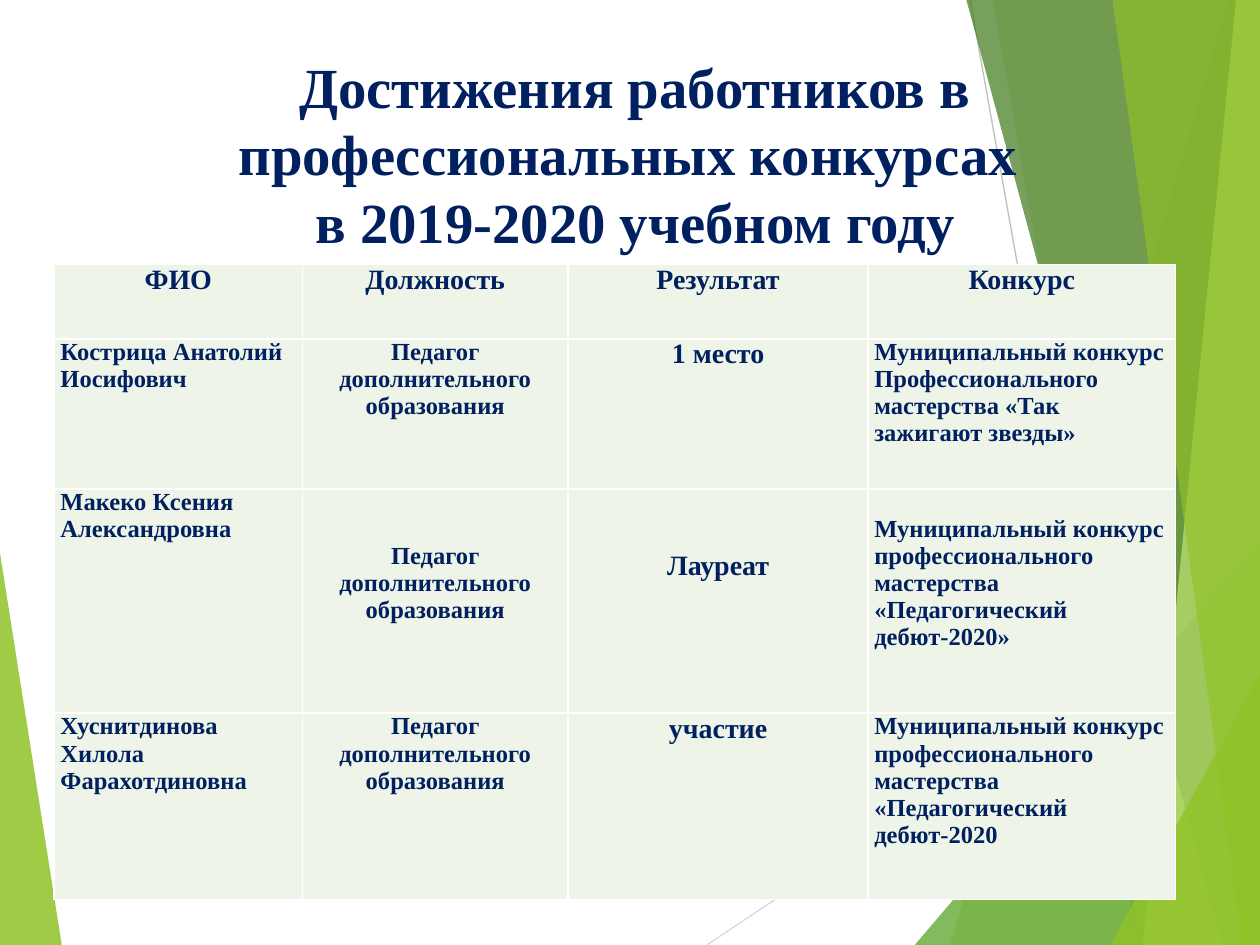
"""Build the slide on staff achievements in professional contests."""
from dataclasses import dataclass

from lxml import etree
from pptx import Presentation, util as u
from pptx.dml.color import RGBColor
from pptx.enum import shapes, text
from pptx.oxml import ns

Point = tuple[float, float]
FONT, NAVY, WHITE, CELL = "Times New Roman", "002060", "FFFFFF", "EEF4E8"
GREEN, MID_GREEN, DARK_GREEN, PALE_GREEN = "90C226", "54A021", "3F7819", "C0E474"
W, H = 10, 7.5


@dataclass
class Facet:
    """A translucent polygon of the background."""
    points: list[Point]
    color: str
    opacity: int


@dataclass
class Ray:
    """A thin background line."""
    start: Point
    end: Point
    color: str


@dataclass
class Entry:
    """A table cell: its paragraphs and the gap above them."""
    text: str
    top: float = 0


DECOR = [
    Facet([(0, 4.39), (0.49, H), (0, H)], GREEN, 85),
    Ray((5.61, H), (W, 4.57), "D9D9D9"),
    Ray((7.7, 0), (9.04, H), "BFBFBF"),
    Facet([(9.75, 0), (7.54, H), (W, H), (W, 0)], GREEN, 30),
    Facet([(7.88, 0), (9.19, H), (W, H), (W, 0)], GREEN, 20),
    Facet([(7.26, H), (W, 4.29), (W, H)], MID_GREEN, 72),
    Facet([(7.67, 0), (9.7, H), (W, H), (W, 0)], DARK_GREEN, 70),
    Facet([(9.81, 0), (9.07, H), (W, H), (W, 0)], PALE_GREEN, 70),
    Facet([(8.83, 0), (9.86, H), (W, H), (W, 0)], GREEN, 65),
    Facet([(8.81, H), (W, 5.35), (W, H)], GREEN, 80),
]
TITLE = "Достижения работников в профессиональных конкурсах \vв 2019-2020 учебном году"
POST = "Педагог дополнительного образования"
DEBUT = "Муниципальный конкурс профессионального мастерства «Педагогический дебют-2020"
COLS = [1.97, 2.11, 2.38, 2.44]
ROWS = [0.59, 1.19, 1.78, 1.48]
ENTRIES = [
    [Entry("ФИО"), Entry("Должность"), Entry("Результат"), Entry("Конкурс")],
    [Entry("Кострица Анатолий Иосифович"), Entry(POST), Entry("1 место"),
     Entry("Муниципальный конкурс\nПрофессионального мастерства «Так зажигают звезды»")],
    [Entry("Макеко Ксения Александровна"), Entry(POST, 0.43), Entry("Лауреат", 0.49),
     Entry(DEBUT + "»", 0.21)],
    [Entry("Хуснитдинова Хилола Фарахотдиновна"), Entry(POST), Entry("участие"), Entry(DEBUT)],
]


def rgb(value: str) -> RGBColor:
    """Return the colour of a hex string."""
    return RGBColor.from_string(value)


def draw_facet(s, facet: Facet) -> None:
    """Draw a translucent polygon."""
    points = [(u.Inches(x), u.Inches(y)) for x, y in facet.points]
    builder = s.shapes.build_freeform(*points[0])
    builder.add_line_segments(points[1:], close=True)
    sp = builder.convert_to_shape()
    sp.shadow.inherit = False
    sp.line.fill.background()
    sp.fill.solid()
    sp.fill.fore_color.rgb = rgb(facet.color)
    color = next(sp._element.spPr.iter(ns.qn("a:srgbClr")))
    etree.SubElement(color, ns.qn("a:alpha"), val=str(facet.opacity * 1000))


def draw_ray(s, ray: Ray) -> None:
    """Draw a thin straight line."""
    ends = [u.Inches(v) for v in (*ray.start, *ray.end)]
    line = s.shapes.add_connector(shapes.MSO_CONNECTOR.STRAIGHT, *ends)
    line.line.color.rgb = rgb(ray.color)
    line.line.width = u.Pt(0.75)
    etree.SubElement(line._element.spPr, ns.qn("a:effectLst"))


def style_text(tf, size: float, centred: bool) -> None:
    """Format every paragraph and run of a text frame."""
    for p in tf.paragraphs:
        p.alignment = text.PP_ALIGN.CENTER if centred else text.PP_ALIGN.LEFT
        for r in p.runs:
            r.font.name, r.font.size, r.font.bold = FONT, u.Pt(size), True
            r.font.color.rgb = rgb(NAVY)


def add_title(s) -> None:
    """Add the slide title."""
    box = s.shapes.add_textbox(u.Inches(0.67), u.Inches(0.36), u.Inches(8.74), u.Inches(1.75))
    tf = box.text_frame
    tf.word_wrap = True
    tf.text = TITLE
    style_text(tf, 32.4, True)
    tf.paragraphs[0].line_spacing = u.Pt(38.8)


def add_borders(cell, color: str, width: float) -> None:
    """Give a cell the same border on all four sides."""
    tc_pr = cell._tc.get_or_add_tcPr()
    for side in ("lnL", "lnR", "lnT", "lnB"):
        ln = etree.SubElement(tc_pr, ns.qn(f"a:{side}"), w=str(u.Pt(width)))
        fill = etree.SubElement(ln, ns.qn("a:solidFill"))
        etree.SubElement(fill, ns.qn("a:srgbClr"), val=color)


def fill_cell(cell, entry: Entry, size: float, centred: bool) -> None:
    """Write and style one table cell."""
    add_borders(cell, WHITE, 1)
    cell.fill.solid()
    cell.fill.fore_color.rgb = rgb(CELL)
    cell.margin_left = cell.margin_right = u.Inches(0.05)
    cell.margin_top, cell.margin_bottom = u.Inches(entry.top), u.Inches(0)
    cell.text_frame.text = entry.text
    style_text(cell.text_frame, size, centred)


def add_results(s) -> None:
    """Add the table of contest results."""
    frame = s.shapes.add_table(len(ROWS), len(COLS), u.Inches(0.43), u.Inches(2.1),
                               u.Inches(sum(COLS)), u.Inches(sum(ROWS)))
    table = frame.table
    for column, width in zip(table.columns, COLS):
        column.width = u.Inches(width)
    for row, height in zip(table.rows, ROWS):
        row.height = u.Inches(height)
    for i, row in enumerate(ENTRIES):
        for j, entry in enumerate(row):
            size = 16 if i == 0 or j == 2 else 14
            fill_cell(table.cell(i, j), entry, size, i == 0 or j in (1, 2))


def main() -> None:
    """Build and save the slide."""
    prs = Presentation()
    prs.slide_width, prs.slide_height = u.Inches(W), u.Inches(H)
    s = prs.slides.add_slide(prs.slide_layouts[6])
    for item in DECOR:
        if isinstance(item, Facet):
            draw_facet(s, item)
        else:
            draw_ray(s, item)
    add_title(s)
    add_results(s)
    prs.save("out.pptx")


if __name__ == "__main__":
    main()
